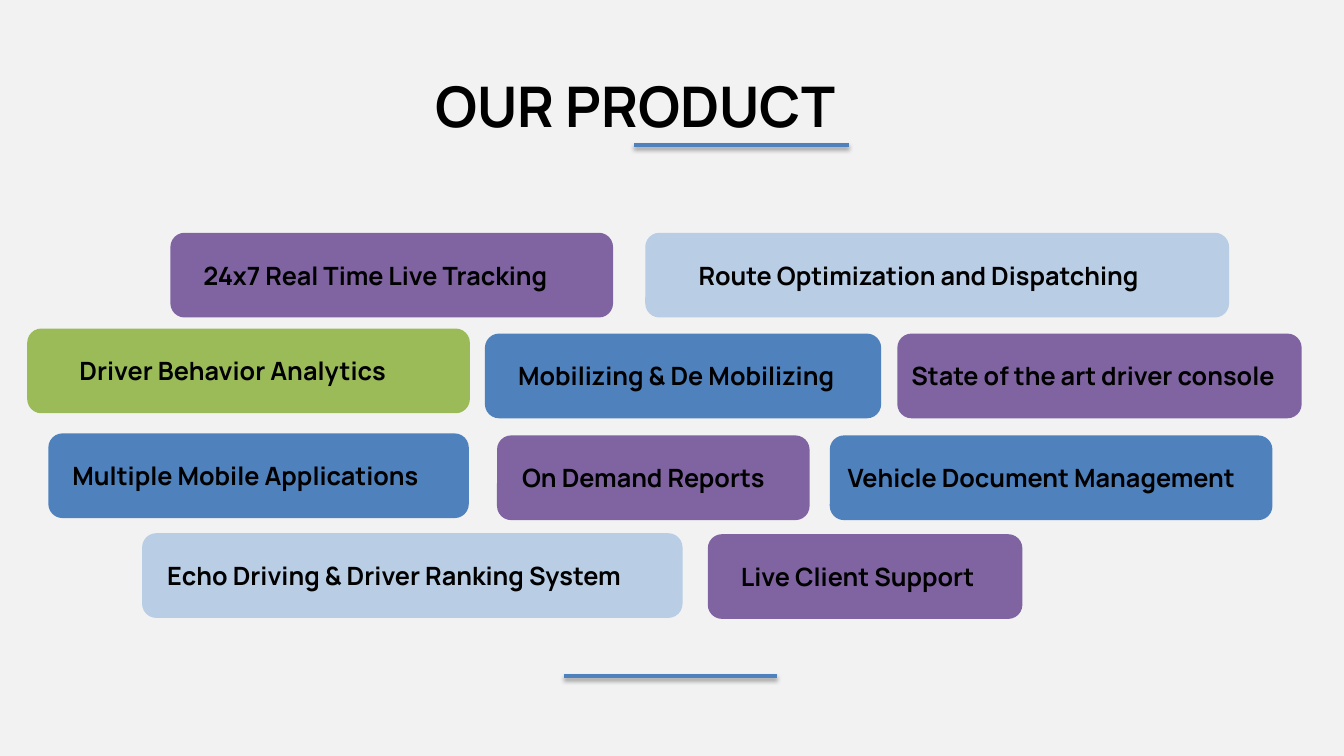
from lxml import etree
from pptx import Presentation
from pptx.dml.color import RGBColor
from pptx.enum import shapes, text
from pptx.oxml import ns
from pptx.util import Inches, Pt

COLORS = {
    "background": "F2F2F2",
    "black": "000000",
    "purple": "8064A2",
    "pale": "B9CDE5",
    "green": "9BBB59",
    "blue": "4F81BD",
}


def rgb(name):
    return RGBColor.from_string(COLORS[name])


def write(tf, content, size=18, color="black", bold=True, font="Manrope"):
    tf.word_wrap = True
    tf.auto_size = text.MSO_AUTO_SIZE.NONE
    tf.vertical_anchor = text.MSO_ANCHOR.TOP
    p = tf.paragraphs[0]
    p.alignment = text.PP_ALIGN.LEFT
    r = p.add_run()
    r.text = content
    r.font.size = Pt(size)
    r.font.bold = bold
    r.font.name = font
    r.font.color.rgb = rgb(color)


prs = Presentation()
prs.slide_width, prs.slide_height = Inches(13.33), Inches(7.5)
s = prs.slides.add_slide(prs.slide_layouts[5])
s.background.fill.solid()
s.background.fill.fore_color.rgb = rgb("background")

# Title
title = s.shapes.title
title.left, title.top = Inches(4.22), Inches(0.66)
title.width, title.height = Inches(4.58), Inches(0.77)
write(title.text_frame, "OUR PRODUCT", size=40)

# Product cards: label, colour, card left, top, width, label left, width
CARD_H, LABEL_H, LABEL_DROP = 0.84, 0.4, 0.22
cards = [
    ("24x7 Real Time Live Tracking", "purple", 1.69, 2.31, 4.39, 1.92, 4.14),
    ("Route Optimization and Dispatching", "pale", 6.4, 2.31, 5.79, 6.83, 4.93),
    ("Driver Behavior Analytics", "green", 0.27, 3.26, 4.39, 0.69, 3.53),
    ("Mobilizing & De Mobilizing", "blue", 4.81, 3.31, 3.93, 5.04, 3.65),
    ("State of the art driver console", "purple", 8.9, 3.31, 4.01, 8.94, 4.06),
    ("Multiple Mobile Applications", "blue", 0.48, 4.3, 4.17, 0.62, 3.91),
    ("On Demand Reports", "purple", 4.93, 4.32, 3.1, 5.08, 2.85),
    ("Vehicle Document Management", "blue", 8.23, 4.32, 4.39, 8.31, 4.56),
    ("Echo Driving & Driver Ranking System", "pale", 1.41, 5.29, 5.36, 1.56, 5.21),
    ("Live Client Support", "purple", 7.02, 5.3, 3.12, 7.25, 2.79),
]
for label, color, left, top, width, label_left, label_width in cards:
    sp = s.shapes.add_shape(shapes.MSO_SHAPE.ROUNDED_RECTANGLE, Inches(left),
                            Inches(top), Inches(width), Inches(CARD_H))
    sp.shadow.inherit = False
    sp.fill.solid()
    sp.fill.fore_color.rgb = rgb(color)
    sp.line.fill.background()
    box = s.shapes.add_textbox(Inches(label_left), Inches(top + LABEL_DROP),
                               Inches(label_width), Inches(LABEL_H))
    write(box.text_frame, label)

# Accent lines with a soft shadow below
for x1, x2, y in [(6.29, 8.42, 1.44), (5.59, 7.71, 6.71)]:
    line = s.shapes.add_connector(shapes.MSO_CONNECTOR.STRAIGHT, Inches(x1),
                                  Inches(y), Inches(x2), Inches(y))
    line.line.color.rgb = rgb("blue")
    line.line.width = Pt(3)
    effects = etree.SubElement(line._element.spPr, ns.qn("a:effectLst"))
    shadow = etree.SubElement(effects, ns.qn("a:outerShdw"), blurRad=str(Pt(3.1)),
                              dist=str(Pt(1.8)), dir="5400000", rotWithShape="0")
    tint = etree.SubElement(shadow, ns.qn("a:srgbClr"), val=COLORS["black"])
    etree.SubElement(tint, ns.qn("a:alpha"), val="35000")

prs.save("out.pptx")
